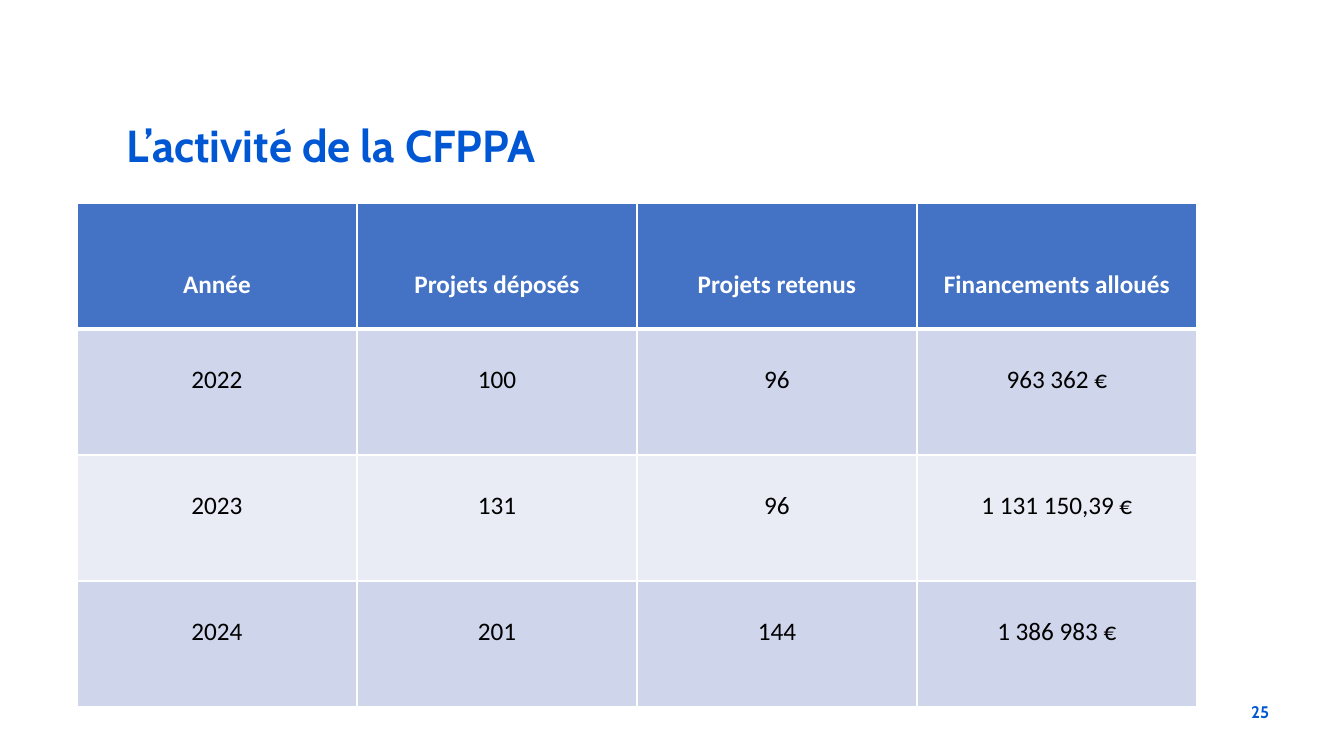
from lxml import etree
from pptx import Presentation
from pptx.dml.color import RGBColor
from pptx.enum.text import MSO_ANCHOR, PP_ALIGN
from pptx.oxml.ns import qn
from pptx.util import Pt

TOP = MSO_ANCHOR.TOP
LEFT, MID, RIGHT = PP_ALIGN.LEFT, PP_ALIGN.CENTER, PP_ALIGN.RIGHT
BLUE, WHITE, BLACK = "0057D4", "FFFFFF", "000000"
HEAD, BANDS = "4472C4", ("CFD5EA", "E9EBF5")
ROWS = (
    ("Année", "Projets déposés", "Projets retenus", "Financements alloués"),
    ("2022", "100", "96", "963 362 €"),
    ("2023", "131", "96", "1 131 150,39 €"),
    ("2024", "201", "144", "1 386 983 €"),
)


def px(n):
    """Turn pixels into EMU."""
    return round(n * 914400 / 100.8)


def hue(code):
    """Turn a hex string into a colour."""
    return RGBColor.from_string(code)


def write(frame, text, size, face, code, bold, align):
    """Fill a text frame with one styled paragraph."""
    frame.text = text
    para = frame.paragraphs[0]
    para.alignment = align
    font = para.font
    font.size, font.name, font.bold = Pt(size), face, bold
    font.color.rgb = hue(code)
    return para


def edge(cell, side, width):
    """Draw one white border of a cell."""
    line = etree.SubElement(cell._tc.get_or_add_tcPr(), qn(f"a:ln{side}"), w=str(Pt(width)))
    fill = etree.SubElement(line, qn("a:solidFill"))
    etree.SubElement(fill, qn("a:srgbClr"), val=WHITE)


def title(slide, x, y, w, h):
    """Place the slide title."""
    shape = slide.shapes.title
    shape.left, shape.top, shape.width, shape.height = map(px, (x, y, w, h))
    frame = shape.text_frame
    frame.vertical_anchor = TOP
    para = write(frame, "L’activité de la CFPPA", 32, "Cabin", BLUE, True, LEFT)
    para.line_spacing = 0.9


def number(slide, x, y, w, h):
    """Place the slide number."""
    frame = slide.shapes.add_textbox(*map(px, (x, y, w, h))).text_frame
    frame.word_wrap = True
    write(frame, "25", 12, "Cabin", BLUE, True, RIGHT)


def grid(slide, x, y, w, h):
    """Place the table of projects by year."""
    table = slide.shapes.add_table(len(ROWS), len(ROWS[0]), *map(px, (x, y, w, h))).table
    for r, row in enumerate(ROWS):
        first = r == 0
        for c, text in enumerate(row):
            cell = table.cell(r, c)
            for side in "LRTB":
                thick = (r, side) in ((0, "B"), (1, "T"))
                edge(cell, side, 3 if thick else 1)
            cell.fill.solid()
            cell.fill.fore_color.rgb = hue(HEAD if first else BANDS[(r - 1) % 2])
            cell.margin_top = px(67 if first else 36)
            write(cell.text_frame, text, 18, "Calibri", WHITE if first else BLACK, first, MID)


def main():
    """Build and save the slide."""
    deck = Presentation()
    deck.slide_width, deck.slide_height = px(1344), px(756)
    slide = deck.slides.add_slide(deck.slide_layouts[5])
    number(slide, 977, 697, 302, 40)
    title(slide, 116, 119, 937, 62)
    grid(slide, 77, 203, 1120, 504)
    deck.save("out.pptx")


if __name__ == "__main__":
    main()
